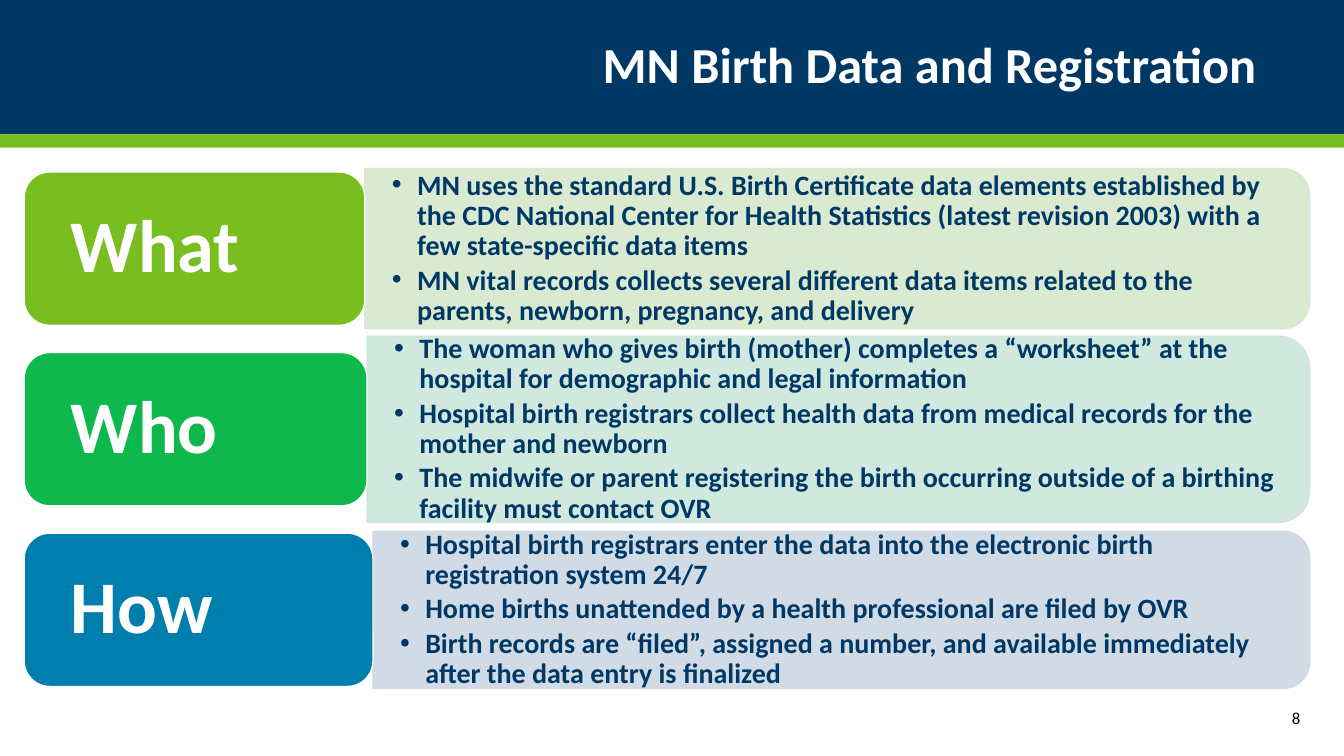
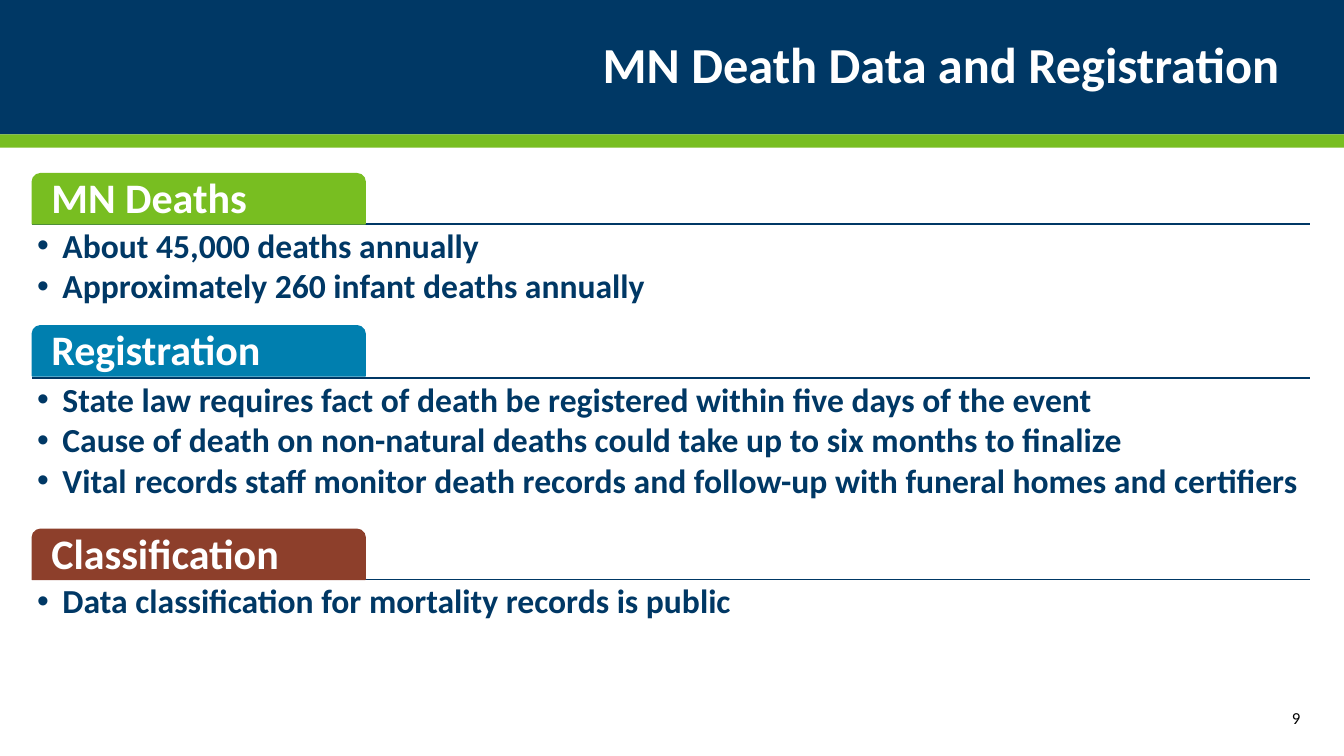
"""Build two slides on birth and death data registration."""
from dataclasses import dataclass

from lxml.etree import SubElement
from pptx import Presentation
from pptx.dml.color import RGBColor
from pptx.enum.shapes import MSO_CONNECTOR, MSO_SHAPE
from pptx.enum.text import MSO_ANCHOR, MSO_AUTO_SIZE, PP_ALIGN
from pptx.oxml.ns import qn
from pptx.util import Pt

COLORS = {
    "navy": "003865",
    "lime": "78BE21",
    "green": "0FB84C",
    "blue": "007FAF",
    "brick": "8D3F2B",
    "pale_lime": "D6E8CD",
    "pale_green": "CCE6DB",
    "pale_blue": "CCD8E3",
    "white": "FFFFFF",
    "black": "000000",
}
FONT = "Calibri"
SLIDE_WIDTH, SLIDE_HEIGHT = 960, 540
BAND_HEIGHT, STRIPE_HEIGHT = 96, 9.5
TITLE_LEFT = 430.5
CONTENT_RIGHT = 935.5
OUTLINE = 0.85

LABEL_LEFT, LABEL_HEIGHT = 17.3, 109.4
FIRST_CENTER, CENTER_STEP = 177.6, 129
LIST_RIGHT = 930

TAB_LEFT, TAB_WIDTH, TAB_HEIGHT = 23, 238, 36


@dataclass(frozen=True)
class Panel:
    label: str
    color: str
    pale_color: str
    left: float
    height: float
    items: tuple[str, ...]


@dataclass(frozen=True)
class Section:
    heading: str
    color: str
    tab_top: float
    rule_top: float
    list_height: float
    items: tuple[str, ...]


PANELS = (
    Panel("What", "lime", "pale_lime", 260.6, 114.5, (
        "MN uses the standard U.S. Birth Certificate data elements established by the CDC "
        "National Center for Health Statistics (latest revision 2003) with a few "
        "state-specific data items",
        "MN vital records collects several different data items related to the parents, "
        "newborn, pregnancy, and delivery",
    )),
    Panel("Who", "green", "pale_green", 262.2, 133.2, (
        "The woman who gives birth (mother) completes a “worksheet” at the hospital for "
        "demographic and legal information",
        "Hospital birth registrars collect health data from medical records for the mother "
        "and newborn",
        "The midwife or parent registering the birth occurring outside of a birthing "
        "facility must contact OVR",
    )),
    Panel("How", "blue", "pale_blue", 266.4, 112.3, (
        "Hospital birth registrars enter the data into the electronic birth registration "
        "system 24/7",
        "Home births unattended by a health professional are filed by OVR",
        "Birth records are “filed”, assigned a number, and available immediately after the "
        "data entry is finalized",
    )),
)

SECTIONS = (
    Section("MN Deaths", "lime", 124, 160, 72, (
        "About 45,000 deaths annually",
        "Approximately 260 infant deaths annually",
    )),
    Section("Registration", "blue", 232.6, 270, 106, (
        "State law requires fact of death be registered within five days of the event",
        "Cause of death on non-natural deaths could take up to six months to finalize",
        "Vital records staff monitor death records and follow-up with funeral homes and "
        "certifiers",
    )),
    Section("Classification", "brick", 378, 414, 72, (
        "Data classification for mortality records is public",
    )),
)


def rgb(name: str) -> RGBColor:
    """Return a palette colour."""
    return RGBColor.from_string(COLORS[name])


def place(shape, left: float, top: float, width: float, height: float) -> None:
    """Move and size a shape in points."""
    shape.left, shape.top = Pt(left), Pt(top)
    shape.width, shape.height = Pt(width), Pt(height)


def write_text(shape, lines, *, size: float, color: str, bold: bool = True,
               align=PP_ALIGN.LEFT, anchor=MSO_ANCHOR.MIDDLE, inset: float = 0,
               inset_top: float = 0, bulleted: bool = False, spacing: float = 0.9) -> None:
    """Fill a shape with formatted paragraphs."""
    frame = shape.text_frame
    frame.word_wrap = True
    frame.auto_size = MSO_AUTO_SIZE.NONE
    frame.vertical_anchor = anchor
    frame.margin_left = frame.margin_right = Pt(inset)
    frame.margin_top = frame.margin_bottom = Pt(inset_top)
    for index, line in enumerate(lines):
        paragraph = frame.add_paragraph() if index else frame.paragraphs[0]
        properties = paragraph._p.get_or_add_pPr()
        hanging = Pt(18) if bulleted else 0
        properties.set("marL", str(hanging))
        properties.set("indent", str(-hanging))
        if bulleted:
            SubElement(properties, qn("a:buFont")).set("typeface", "Arial")
            SubElement(properties, qn("a:buChar")).set("char", "•")
        paragraph.alignment = align
        paragraph.line_spacing = spacing
        paragraph.space_before = Pt(0)
        paragraph.space_after = Pt(3 if bulleted else 0)
        run = paragraph.add_run()
        run.text = line
        run.font.name = FONT
        run.font.size = Pt(size)
        run.font.bold = bold
        run.font.color.rgb = rgb(color)


def add_block(slide, preset, left: float, top: float, width: float, height: float,
              fill: str, outline: str | None = None):
    """Add a filled preset shape without a shadow."""
    shape = slide.shapes.add_shape(preset, Pt(left), Pt(top), Pt(width), Pt(height))
    shape.shadow.inherit = False
    shape.fill.solid()
    shape.fill.fore_color.rgb = rgb(fill)
    if outline:
        shape.line.color.rgb = rgb(outline)
        shape.line.width = Pt(OUTLINE)
    else:
        shape.line.fill.background()
    return shape


def add_rule(slide, top: float) -> None:
    """Add a thin horizontal line across the content."""
    rule = slide.shapes.add_connector(
        MSO_CONNECTOR.STRAIGHT, Pt(TAB_LEFT), Pt(top), Pt(CONTENT_RIGHT), Pt(top))
    rule.line.color.rgb = rgb("navy")
    rule.line.width = Pt(OUTLINE)
    SubElement(rule.element.spPr, qn("a:effectLst"))


def make_translucent(shape, percent: int) -> None:
    """Set the opacity of the fill and the line of a shape."""
    for color in shape.element.spPr.iter(qn("a:srgbClr")):
        SubElement(color, qn("a:alpha")).set("val", str(percent * 1000))


def add_header_bands(slide) -> None:
    """Draw the header bands and hand them to the layout of the slide."""
    bands = ((0, BAND_HEIGHT, "navy"), (BAND_HEIGHT, STRIPE_HEIGHT, "lime"))
    for position, (top, height, color) in enumerate(bands, start=2):
        band = add_block(slide, MSO_SHAPE.RECTANGLE, 0, top, SLIDE_WIDTH, height, color)
        slide.slide_layout.shapes.element.insert(position, band.element)


def add_slide(presentation, layout, title: str, number: int):
    """Add a titled slide and return it with its three list placeholders."""
    slide = presentation.slides.add_slide(layout)
    place(slide.shapes.title, TITLE_LEFT, 0, 936 - TITLE_LEFT, BAND_HEIGHT)
    write_text(slide.shapes.title, [title], size=36, color="white")
    number_box = slide.shapes.add_textbox(Pt(820.8), Pt(498.2), Pt(115.2), Pt(28.8))
    write_text(number_box, [str(number)], size=12, color="black", bold=False,
               align=PP_ALIGN.RIGHT, inset=7.2, spacing=1)
    *lists, spare = list(slide.placeholders)[1:]
    spare.element.getparent().remove(spare.element)
    return slide, lists


def bring_to_front(shape) -> None:
    """Move a shape above all others on its slide."""
    shape.element.getparent().append(shape.element)


def draw_panel(slide, body, panel: Panel, center: float) -> None:
    """Draw a label and the pale panel with its list."""
    width = CONTENT_RIGHT - panel.left
    middle = panel.left + width / 2
    backdrop = add_block(slide, MSO_SHAPE.ROUND_2_SAME_RECTANGLE,
                         middle - panel.height / 2, center - width / 2,
                         panel.height, width, panel.pale_color, panel.pale_color)
    backdrop.rotation = 90
    make_translucent(backdrop, 90)
    label = add_block(slide, MSO_SHAPE.ROUNDED_RECTANGLE, LABEL_LEFT,
                      center - LABEL_HEIGHT / 2, panel.left - LABEL_LEFT, LABEL_HEIGHT,
                      panel.color, "white")
    write_text(label, [panel.label], size=53, color="white", inset=28)
    place(body, panel.left, center - panel.height / 2, LIST_RIGHT - panel.left, panel.height)
    write_text(body, panel.items, size=20, color="navy", inset=19.4, bulleted=True)
    bring_to_front(body)


def draw_section(slide, body, section: Section) -> None:
    """Draw a heading tab, its rule and the list below."""
    add_rule(slide, section.rule_top)
    tab = add_block(slide, MSO_SHAPE.ROUND_2_SAME_RECTANGLE, TAB_LEFT, section.tab_top,
                    TAB_WIDTH, TAB_HEIGHT, section.color, section.color)
    write_text(tab, [section.heading], size=30, color="white", inset=12)
    place(body, TAB_LEFT, section.rule_top, 936 - TAB_LEFT, section.list_height)
    write_text(body, section.items, size=24, color="navy", anchor=MSO_ANCHOR.TOP,
               inset=3.6, inset_top=3.6, bulleted=True)
    bring_to_front(body)


def main() -> None:
    """Build and save the presentation."""
    presentation = Presentation()
    presentation.slide_width, presentation.slide_height = Pt(SLIDE_WIDTH), Pt(SLIDE_HEIGHT)
    layout = presentation.slide_layouts.get_by_name("Comparison")

    slide, lists = add_slide(presentation, layout, "MN Birth Data and Registration", 8)
    add_header_bands(slide)
    for index, (body, panel) in enumerate(zip(lists, PANELS)):
        draw_panel(slide, body, panel, FIRST_CENTER + index * CENTER_STEP)

    slide, lists = add_slide(presentation, layout, "MN Death Data and Registration", 9)
    for body, section in zip(lists, SECTIONS):
        draw_section(slide, body, section)

    presentation.save("out.pptx")


if __name__ == "__main__":
    main()
